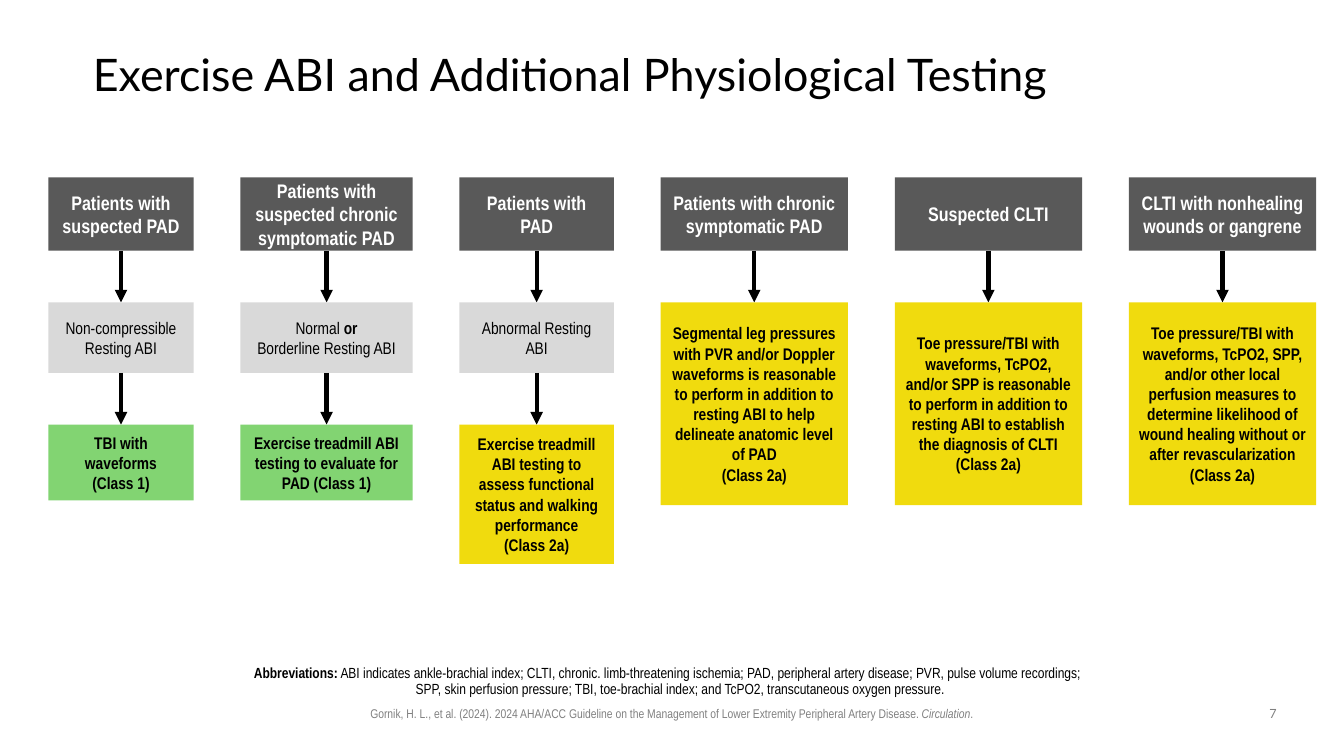
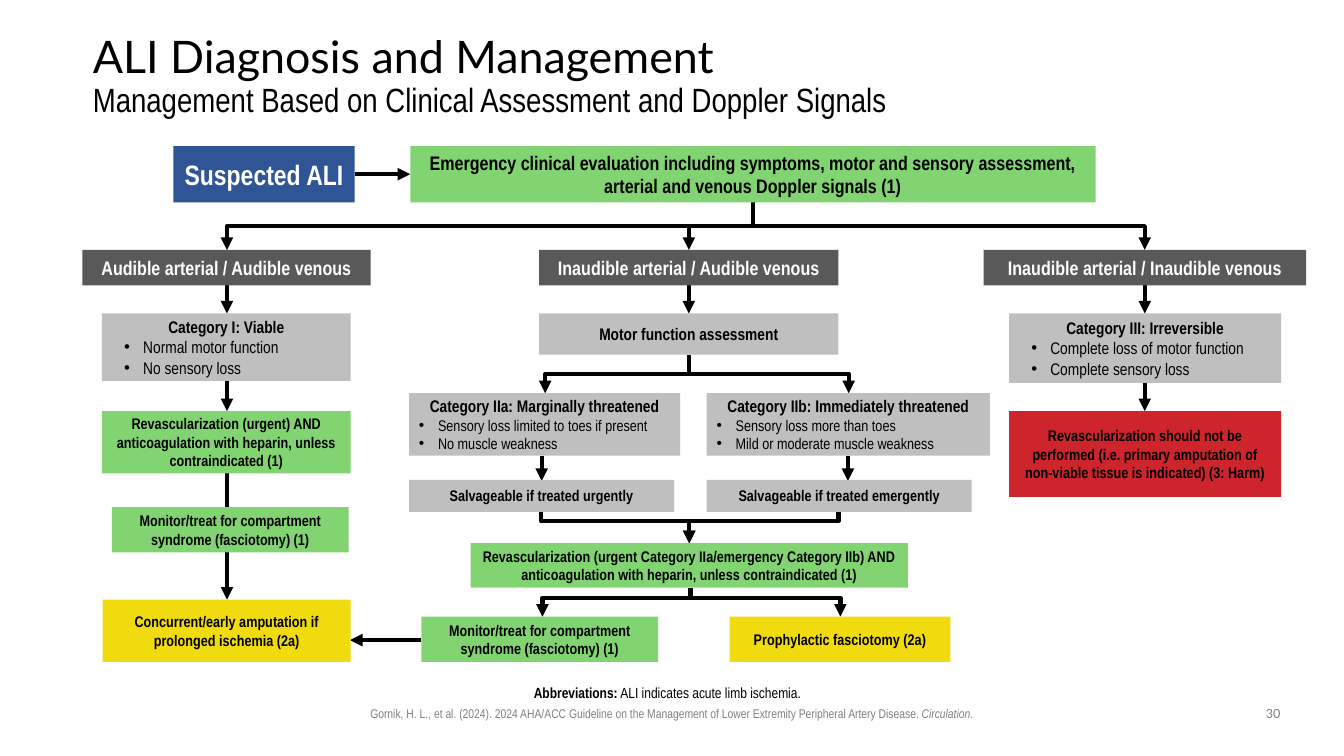
"""Builds two clinical decision-pathway slides on peripheral artery disease."""
from dataclasses import dataclass

from lxml import etree
from pptx import Presentation
from pptx import util as u
from pptx.dml.color import RGBColor
from pptx.enum import shapes, text
from pptx.oxml.ns import qn
from pptx.slide import Slide

BLACK, WHITE, MUTED = "000000", "FFFFFF", "808080"
GROUP, NAVY, FINDING, CATEGORY = "595959", "2F5597", "D9D9D9", "BFBFBF"
CLASS_1, CLASS_2A, HARM = "82D472", "F0DB0E", "CE242B"
CITATION = (
    "Gornik, H. L., et al. (2024). 2024 AHA/ACC Guideline on the Management of "
    "Lower Extremity Peripheral Artery Disease. *Circulation*."
)
INSET = (0.25, 0.13, 0.25, 0.13)
NO_INSET = (0, 0, 0, 0)
NOTE_INSET = (0, 0.13, 0.25, 0.13)


@dataclass(frozen=True)
class Style:
    size: float
    color: str = BLACK
    bold: bool = False
    font: str = "Arial Narrow"
    marks_italic: bool = False


TITLE = Style(32, font="Lato")
SUBTITLE = Style(24)
HEADER = Style(14, WHITE, True)
START = Style(20, WHITE, True)
EVALUATION = Style(14, bold=True)
STRONG = Style(12, bold=True)
PLAIN = Style(12)
ACTION = Style(11, bold=True)
DETAIL = Style(11)
NOTE = Style(10.5)
SOURCE = Style(9, MUTED, marks_italic=True)
NUMBER = Style(9, MUTED, font="Lato")


@dataclass(frozen=True)
class Box:
    left: float
    top: float
    width: float
    height: float


@dataclass(frozen=True)
class Card:
    box: Box
    label: str
    fill: str
    style: Style = ACTION
    bullets: tuple[str, ...] = ()
    bullet_style: Style = PLAIN
    bullet_margin: float = 0.79
    inset: tuple[float, ...] = INSET


@dataclass(frozen=True)
class Step:
    label: str
    fill: str
    height: float
    style: Style = STRONG


@dataclass(frozen=True)
class Pathway:
    width: float
    steps: tuple[Step, ...]


@dataclass(frozen=True)
class Fork:
    starts: tuple[tuple[float, float], ...]
    ends: tuple[tuple[float, float], ...]
    bend: float = 0.5


def rgb(value: str) -> RGBColor:
    return RGBColor.from_string(value)


def write(paragraph, content: str, style: Style) -> None:
    for index, piece in enumerate(content.split("*")):
        marked = index % 2 == 1
        for line_index, line in enumerate(piece.split("\n")):
            if line_index:
                paragraph.add_line_break()
                line_break = paragraph._p.findall(qn("a:br"))[-1]
                etree.SubElement(line_break, qn("a:rPr"), sz=str(int(style.size * 100)))
            if line:
                run = paragraph.add_run()
                run.text = line
                run.font.size = u.Pt(style.size)
                run.font.name = style.font
                run.font.color.rgb = rgb(style.color)
                run.font.bold = style.bold != (marked and not style.marks_italic)
                run.font.italic = marked and style.marks_italic


def indent(paragraph, margin: float, hanging: float) -> None:
    properties = paragraph._p.get_or_add_pPr()
    properties.set("marL", str(u.Cm(margin)))
    properties.set("indent", str(-u.Cm(hanging)))


def prepare_frame(frame, inset: tuple[float, ...], middle: bool) -> None:
    frame.word_wrap = True
    frame.margin_left, frame.margin_top, frame.margin_right, frame.margin_bottom = map(u.Cm, inset)
    frame.vertical_anchor = text.MSO_ANCHOR.MIDDLE if middle else text.MSO_ANCHOR.TOP


def place(box: Box) -> tuple[u.Cm, ...]:
    return tuple(map(u.Cm, (box.left, box.top, box.width, box.height)))


def add_text(slide: Slide, box: Box, content: str, style: Style,
             inset: tuple[float, ...] = INSET, middle: bool = False, centred: bool = True):
    frame = slide.shapes.add_textbox(*place(box)).text_frame
    prepare_frame(frame, inset, middle)
    paragraph = frame.paragraphs[0]
    paragraph.alignment = text.PP_ALIGN.CENTER if centred else text.PP_ALIGN.LEFT
    write(paragraph, content, style)
    return paragraph


def add_card(slide: Slide, card: Card) -> None:
    panel = slide.shapes.add_shape(shapes.MSO_SHAPE.RECTANGLE, *place(card.box))
    panel.shadow.inherit = False
    panel.fill.solid()
    panel.fill.fore_color.rgb = rgb(card.fill)
    panel.line.fill.background()
    frame = panel.text_frame
    prepare_frame(frame, card.inset, True)
    heading = frame.paragraphs[0]
    heading.alignment = text.PP_ALIGN.CENTER
    write(heading, card.label, card.style)
    for bullet in card.bullets:
        item = frame.add_paragraph()
        item.alignment = text.PP_ALIGN.LEFT
        indent(item, card.bullet_margin, 0.48)
        properties = item._p.get_or_add_pPr()
        etree.SubElement(properties, qn("a:buFont"), typeface="Arial")
        etree.SubElement(properties, qn("a:buChar"), char="•")
        write(item, bullet, card.bullet_style)


def finish_arrow(arrow) -> None:
    arrow.line.color.rgb = rgb(BLACK)
    arrow.line.width = u.Pt(3)
    etree.SubElement(arrow.line._get_or_add_ln(), qn("a:tailEnd"), type="triangle")
    etree.SubElement(arrow.element.spPr, qn("a:effectLst"))


def add_arrow(slide: Slide, x1: float, y1: float, x2: float, y2: float) -> None:
    finish_arrow(slide.shapes.add_connector(
        shapes.MSO_CONNECTOR.STRAIGHT, *map(u.Cm, (x1, y1, x2, y2))))


def add_elbow(slide: Slide, start: tuple[float, float], end: tuple[float, float], bend: float) -> None:
    (x1, y1), (x2, y2) = start, end
    centre_x, centre_y = (x1 + x2) / 2, (y1 + y2) / 2
    rightward = x2 > x1
    reach = (y2 - y1) / 2 * (1 if rightward else -1)
    spread = abs(x2 - x1) / 2
    elbow = slide.shapes.add_connector(
        shapes.MSO_CONNECTOR.ELBOW,
        *map(u.Cm, (centre_x + reach, centre_y - spread, centre_x - reach, centre_y + spread)))
    properties = elbow.element.spPr
    properties.find(qn("a:xfrm")).set("rot", str((270 if rightward else 90) * 60000))
    adjustments = properties.find(qn("a:prstGeom")).find(qn("a:avLst"))
    etree.SubElement(adjustments, qn("a:gd"), name="adj1", fmla=f"val {int(bend * 100000)}")
    finish_arrow(elbow)


def start_slide(deck, title: str, number: str, subtitle: str = "") -> Slide:
    slide = deck.slides.add_slide(deck.slide_layouts[6])
    add_text(slide, Box(7.47, 17.65, 18.92, 0.64), CITATION, SOURCE)
    heading = add_text(slide, Box(2.34, 1.02, 29.21, 1.85),
                       f"{title}\n" if subtitle else title, TITLE, NO_INSET, True, False)
    heading.line_spacing = 0.9
    write(heading, subtitle, SUBTITLE)
    add_text(slide, Box(31.55, 17.65, 1.07, 0.66), number, NUMBER)
    return slide


def add_abbreviations(slide: Slide, box: Box, content: str, hanging: float = 0) -> None:
    note = add_text(slide, box, f"*Abbreviations:* {content}", NOTE, NOTE_INSET)
    note.line_spacing = 0.9
    indent(note, hanging, hanging)


PATHWAYS = (
    Pathway(3.66, (
        Step("Patients with suspected PAD", GROUP, 1.85, HEADER),
        Step("Non-compressible Resting ABI", FINDING, 1.78, PLAIN),
        Step("TBI with waveforms\n(Class 1)", CLASS_1, 1.91))),
    Pathway(4.34, (
        Step("Patients with suspected chronic symptomatic PAD", GROUP, 1.85, HEADER),
        Step("Normal *or*\nBorderline Resting ABI", FINDING, 1.78, PLAIN),
        Step("Exercise treadmill ABI testing to evaluate for PAD (Class 1)", CLASS_1, 1.91))),
    Pathway(3.89, (
        Step("Patients with PAD", GROUP, 1.85, HEADER),
        Step("Abnormal Resting ABI", FINDING, 1.78, PLAIN),
        Step("Exercise treadmill ABI testing to assess functional status and walking "
             "performance\n(Class 2a)", CLASS_2A, 3.51))),
    Pathway(4.72, (
        Step("Patients with chronic symptomatic PAD", GROUP, 1.85, HEADER),
        Step("Segmental leg pressures with PVR and/or Doppler waveforms is reasonable to perform "
             "in addition to resting ABI to help delineate anatomic level of PAD\n(Class 2a)",
             CLASS_2A, 5.11))),
    Pathway(4.72, (
        Step("Suspected CLTI", GROUP, 1.85, HEADER),
        Step("Toe pressure/TBI with waveforms, TcPO2, and/or SPP is reasonable to perform in "
             "addition to resting ABI to establish the diagnosis of CLTI\n(Class 2a)",
             CLASS_2A, 5.11))),
    Pathway(4.72, (
        Step("CLTI with nonhealing wounds or gangrene", GROUP, 1.85, HEADER),
        Step("Toe pressure/TBI with waveforms, TcPO2, SPP, and/or other local perfusion measures "
             "to determine likelihood of wound healing without or after revascularization\n(Class 2a)",
             CLASS_2A, 5.11))),
)

FASCIOTOMY = "Monitor/treat for compartment syndrome (fasciotomy) (1)"
ALI_CARDS = (
    Card(Box(4.37, 3.68, 4.57, 1.42), "Suspected ALI", NAVY, START, inset=NO_INSET),
    Card(Box(10.34, 3.68, 17.27, 1.42),
         "Emergency clinical evaluation including symptoms, motor and sensory assessment, "
         "arterial and venous Doppler signals (1)", CLASS_1, EVALUATION),
    Card(Box(2.08, 6.3, 7.26, 0.89), "Audible arterial / Audible venous", GROUP, HEADER),
    Card(Box(13.59, 6.3, 7.54, 0.89), "Inaudible arterial / Audible venous", GROUP, HEADER),
    Card(Box(24.79, 6.3, 8.13, 0.89), "Inaudible arterial / Inaudible venous", GROUP, HEADER),
    Card(Box(2.57, 7.9, 6.27, 1.7), "Category I: Viable", CATEGORY, STRONG,
         ("Normal motor function", "No sensory loss")),
    Card(Box(13.59, 7.9, 7.54, 1.04), "Motor function assessment", CATEGORY, STRONG),
    Card(Box(25.43, 7.9, 6.86, 1.75), "Category III: Irreversible", CATEGORY, STRONG,
         ("Complete loss of motor function", "Complete sensory loss")),
    Card(Box(10.31, 9.91, 6.83, 1.57), "Category IIa: Marginally threatened", CATEGORY, STRONG,
         ("Sensory loss limited to toes if present", "No muscle weakness"), DETAIL, 0.48),
    Card(Box(17.81, 9.91, 7.14, 1.57), "Category IIb: Immediately threatened", CATEGORY, STRONG,
         ("Sensory loss more than toes", "Mild or moderate muscle weakness"), DETAIL, 0.48),
    Card(Box(2.57, 10.36, 6.27, 1.57),
         "Revascularization (urgent) AND anticoagulation with heparin, unless contraindicated (1)", CLASS_1),
    Card(Box(25.43, 10.36, 6.86, 2.16),
         "Revascularization should not be performed (i.e. primary amputation of non-viable "
         "tissue is indicated) (3: Harm)", HARM),
    Card(Box(10.31, 12.09, 6.68, 0.81), "Salvageable if treated urgently", CATEGORY),
    Card(Box(17.81, 12.09, 6.68, 0.81), "Salvageable if treated emergently", CATEGORY),
    Card(Box(2.82, 12.78, 5.97, 1.14), FASCIOTOMY, CLASS_1),
    Card(Box(11.86, 13.69, 11.02, 1.12),
         "Revascularization (urgent Category IIa/emergency Category IIb) AND anticoagulation "
         "with heparin, unless contraindicated (1)", CLASS_1),
    Card(Box(2.59, 15.11, 6.25, 1.57), "Concurrent/early amputation if prolonged ischemia (2a)", CLASS_2A),
    Card(Box(10.62, 15.54, 5.97, 1.14), FASCIOTOMY, CLASS_1),
    Card(Box(18.39, 15.54, 5.56, 1.14), "Prophylactic fasciotomy (2a)", CLASS_2A),
)
ALI_ARROWS = (
    (8.94, 4.39, 10.34, 4.39), (5.72, 7.19, 5.72, 7.9), (17.36, 7.19, 17.36, 7.9),
    (28.85, 7.19, 28.85, 7.9), (5.72, 9.6, 5.72, 10.36), (28.85, 9.65, 28.85, 10.36),
    (13.65, 11.48, 13.65, 12.12), (21.37, 11.48, 21.37, 12.12),
    (5.72, 11.93, 5.72, 15.11), (10.62, 16.13, 8.82, 16.13),
)
ALI_FORKS = (
    Fork(((18.97, 5.1),), ((5.72, 6.3), (17.36, 6.3), (28.85, 6.3))),
    Fork(((17.37, 8.94),), ((13.74, 9.91), (21.39, 9.91))),
    Fork(((13.64, 12.9), (21.13, 12.9)), ((17.37, 13.69),), 0.29),
    Fork(((17.4, 14.81),), ((13.67, 15.54), (21.18, 15.54)), 0.35),
)


def build_testing(deck) -> None:
    slide = start_slide(deck, "Exercise ABI and Additional Physiological Testing", "7")
    add_abbreviations(
        slide, Box(4.22, 16.66, 25.45, 0.97),
        "ABI indicates ankle-brachial index; CLTI, chronic. limb-threatening ischemia; PAD, peripheral "
        "artery disease; PVR, pulse volume recordings;\nSPP, skin perfusion pressure; TBI, toe-brachial "
        "index; and TcPO2, transcutaneous oxygen pressure.", 0.64)
    left, column_gap, row_gap = 1.22, 1.18, 1.3
    for pathway in PATHWAYS:
        top = 4.47
        centre = left + pathway.width / 2
        for index, step in enumerate(pathway.steps):
            if index:
                add_arrow(slide, centre, top - row_gap, centre, top)
            add_card(slide, Card(Box(left, top, pathway.width, step.height), step.label, step.fill, step.style))
            top += step.height + row_gap
        left += pathway.width + column_gap


def build_ali(deck) -> None:
    slide = start_slide(deck, "ALI Diagnosis and Management", "30",
                        "Management Based on Clinical Assessment and Doppler Signals")
    add_abbreviations(slide, Box(5.97, 17.15, 21.95, 0.58), "ALI indicates acute limb ischemia.")
    for arrow in ALI_ARROWS:
        add_arrow(slide, *arrow)
    for fork in ALI_FORKS:
        for start in fork.starts:
            for end in fork.ends:
                add_elbow(slide, start, end, fork.bend)
    for card in ALI_CARDS:
        add_card(slide, card)


def main() -> None:
    deck = Presentation()
    deck.slide_width, deck.slide_height = u.Cm(33.87), u.Cm(19.05)
    build_testing(deck)
    build_ali(deck)
    deck.save("out.pptx")


if __name__ == "__main__":
    main()
